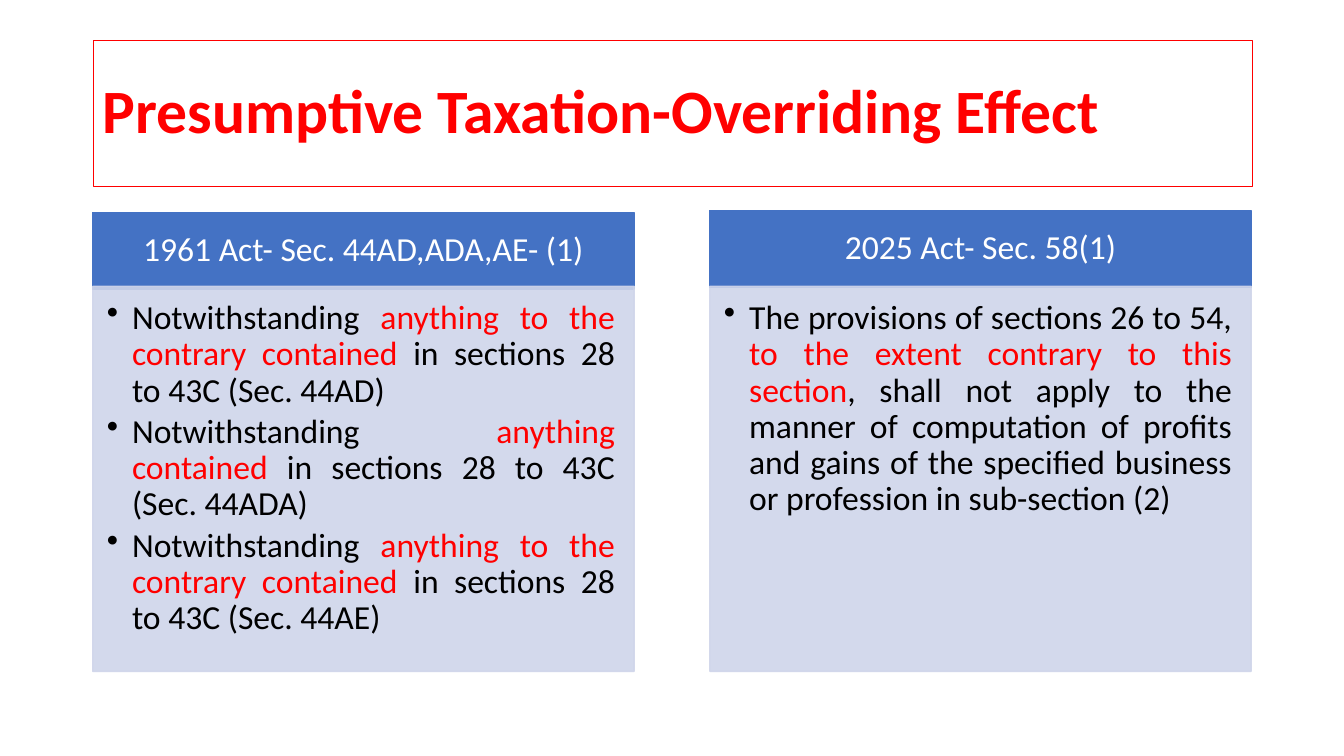
import pptx
import pptx.util
import pptx.dml.color
import pptx.enum.shapes
import pptx.enum.text
import pptx.oxml.ns
import lxml.etree

Inches, Pt = pptx.util.Inches, pptx.util.Pt
ALIGN = pptx.enum.text.PP_ALIGN
ANCHOR = pptx.enum.text.MSO_ANCHOR
COLORS = {"red": "FF0000", "blue": "4472C4", "pale": "CFD5EA",
          "white": "FFFFFF", "black": "000000"}
FONT = "Calibri"

# Content: each paragraph is a list of (text, colour) runs
TITLE = "Presumptive Taxation-Overriding Effect"
COLUMNS = [
    {"head": "1961 Act- Sec. 44AD,ADA,AE- (1)", "head_top": 2.11, "points": [
        [("Notwithstanding ", "black"),
         ("anything to the contrary contained", "red"),
         (" in sections 28 to 43C (Sec. 44AD)", "black")],
        [("Notwithstanding ", "black"),
         ("anything contained", "red"),
         (" in sections 28 to 43C (Sec. 44ADA)", "black")],
        [("Notwithstanding ", "black"),
         ("anything to the contrary contained ", "red"),
         ("in sections 28 to 43C (Sec. 44AE)", "black")]]},
    {"head": "2025 Act- Sec. 58(1)", "head_top": 2.09, "points": [
        [("The provisions of sections 26 to 54, ", "black"),
         ("to the extent contrary to this section", "red"),
         (", shall not apply to the manner of computation of profits and gains "
          "of the specified business or profession in sub-section (2)", "black")]]},
]

# Layout
LEFT, TITLE_W = 0.92, 11.5
COL_W, COL_STEP = 5.37, 6.12
HEAD_H, BODY_TOP, BODY_H = 0.76, 2.84, 3.82


def rgb(name):
    return pptx.dml.color.RGBColor.from_string(COLORS[name])


def add_alpha(sp, percent):
    """Make the fill and line colours of a shape partly transparent."""
    for color in sp._element.spPr.iter(pptx.oxml.ns.qn("a:srgbClr")):
        alpha = lxml.etree.SubElement(color, pptx.oxml.ns.qn("a:alpha"))
        alpha.set("val", str(percent * 1000))


def add_box(s, at, line, line_w, fill=None):
    sp = s.shapes.add_shape(pptx.enum.shapes.MSO_SHAPE.RECTANGLE,
                            *(Inches(v) for v in at))
    sp.shadow.inherit = False
    if fill:
        sp.fill.solid()
        sp.fill.fore_color.rgb = rgb(fill)
    else:
        sp.fill.background()
    sp.line.color.rgb = rgb(line)
    sp.line.width = Pt(line_w)
    return sp


def add_text(sp, paragraphs, size=24, bold=False, align=ALIGN.LEFT,
             anchor=ANCHOR.MIDDLE, insets=(0.1, 0.05, 0.1, 0.05),
             after=0, bullet=False):
    tf = sp.text_frame
    tf.word_wrap = True
    tf.vertical_anchor = anchor
    (tf.margin_left, tf.margin_top,
     tf.margin_right, tf.margin_bottom) = (Inches(v) for v in insets)
    for i, runs in enumerate(paragraphs):
        p = tf.add_paragraph() if i else tf.paragraphs[0]
        if bullet:
            p.level = 1
            pPr = p._p.get_or_add_pPr()
            pPr.set("marL", str(Inches(0.25)))
            pPr.set("indent", str(Inches(-0.25)))
            mark = lxml.etree.SubElement(pPr, pptx.oxml.ns.qn("a:buChar"))
            mark.set("char", "•")
        p.alignment = align
        p.line_spacing = 0.9
        p.space_before = Pt(0)
        p.space_after = Pt(after)
        for text, color in runs:
            r = p.add_run()
            r.text = text
            r.font.name = FONT
            r.font.size = Pt(size)
            r.font.bold = bold
            r.font.color.rgb = rgb(color)


prs = pptx.Presentation()
prs.slide_width, prs.slide_height = Inches(13.33), Inches(7.5)
s = prs.slides.add_slide(prs.slide_layouts[6])

# Title
title = add_box(s, (LEFT, 0.4, TITLE_W, 1.45), "red", 0.25)
add_text(title, [[(TITLE, "red")]], size=44, bold=True)

# One header and one body per Act
for i, column in enumerate(COLUMNS):
    x = LEFT + i * COL_STEP
    head = add_box(s, (x, column["head_top"], COL_W, HEAD_H), "blue", 1, "blue")
    add_text(head, [[(column["head"], "white")]], align=ALIGN.CENTER,
             insets=(0.19, 0.11, 0.19, 0.11), after=8.4)
    body = add_box(s, (x, BODY_TOP, COL_W, BODY_H), "pale", 1, "pale")
    add_alpha(body, 90)
    add_text(body, column["points"], align=ALIGN.JUSTIFY, anchor=ANCHOR.TOP,
             insets=(0.14, 0.14, 0.19, 0.21), after=3.6, bullet=True)

prs.save("out.pptx")
